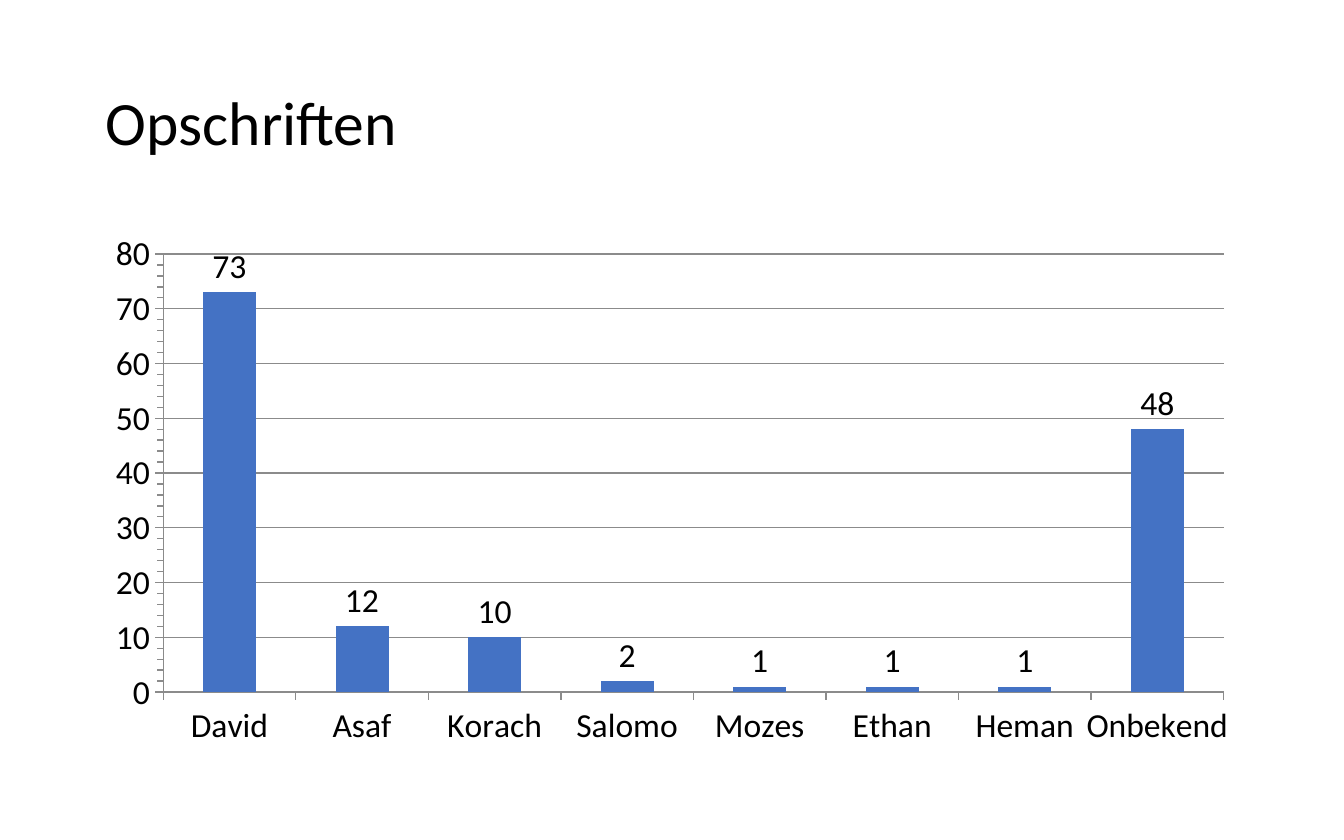
from dataclasses import dataclass

from pptx import Presentation
from pptx.chart.data import CategoryChartData
from pptx.dml.color import RGBColor
from pptx.enum.chart import XL_CHART_TYPE, XL_LABEL_POSITION, XL_TICK_MARK
from pptx.enum.text import MSO_ANCHOR
from pptx.util import Inches, Pt


@dataclass(frozen=True)
class Theme:
    font: str = "Calibri"
    title_size: Pt = Pt(33)
    chart_size: Pt = Pt(18)
    text: RGBColor = RGBColor(0x00, 0x00, 0x00)
    bar: RGBColor = RGBColor(0x44, 0x72, 0xC4)
    line: RGBColor = RGBColor(0x8B, 0x8B, 0x8B)


THEME = Theme()
PSALMS = {
    "David": 73, "Asaf": 12, "Korach": 10, "Salomo": 2,
    "Mozes": 1, "Ethan": 1, "Heman": 1, "Onbekend": 48,
}


def style_font(font, size):
    font.name = THEME.font
    font.size = size
    font.color.rgb = THEME.text


def style_line(line):
    line.color.rgb = THEME.line
    line.width = Pt(0.75)


def add_title(slide, box, text):
    tf = slide.shapes.add_textbox(*box).text_frame
    tf.word_wrap = True
    tf.vertical_anchor = MSO_ANCHOR.MIDDLE
    p = tf.paragraphs[0]
    p.text = text
    p.line_spacing = 0.9
    style_font(p.runs[0].font, THEME.title_size)


def add_psalm_chart(slide, box, counts):
    data = CategoryChartData()
    data.categories = list(counts)
    data.add_series("Series 1", list(counts.values()))
    chart = slide.shapes.add_chart(
        XL_CHART_TYPE.COLUMN_CLUSTERED, *box, data).chart
    chart.has_legend = False
    chart.has_title = False
    style_font(chart.font, THEME.chart_size)

    for axis in (chart.category_axis, chart.value_axis):
        axis.major_tick_mark = XL_TICK_MARK.OUTSIDE
        style_line(axis.format.line)
    values = chart.value_axis
    values.minor_tick_mark = XL_TICK_MARK.OUTSIDE
    values.minimum_scale, values.maximum_scale = 0, 80
    values.major_unit, values.minor_unit = 10, 2
    values.has_major_gridlines = True
    style_line(values.major_gridlines.format.line)

    plot = chart.plots[0]
    plot.gap_width = 150
    plot.vary_by_categories = False
    fill = plot.series[0].format.fill
    fill.solid()
    fill.fore_color.rgb = THEME.bar
    plot.has_data_labels = True
    labels = plot.data_labels
    labels.show_value = True
    labels.position = XL_LABEL_POSITION.OUTSIDE_END
    style_font(labels.font, THEME.chart_size)


def main():
    prs = Presentation()
    prs.slide_width, prs.slide_height = Inches(10), Inches(6.25)
    slide = prs.slides.add_slide(prs.slide_layouts[6])
    left, width = Inches(0.69), Inches(8.62)
    add_title(slide, (left, Inches(0.33), width, Inches(1.21)), "Opschriften")
    add_psalm_chart(slide, (left, Inches(1.66), width, Inches(3.97)), PSALMS)
    prs.save("out.pptx")


if __name__ == "__main__":
    main()
